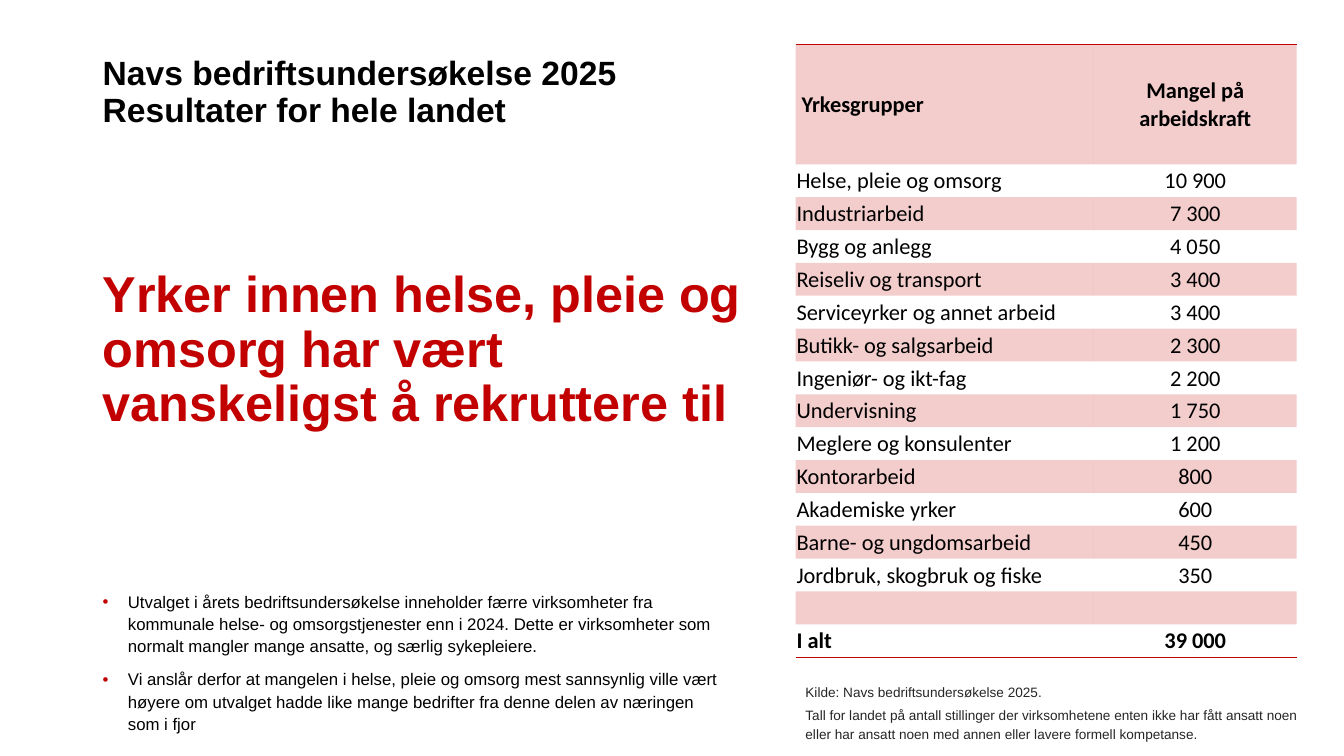
import pptx
import pptx.util
import pptx.dml.color
import pptx.enum.text
import pptx.oxml
import pptx.oxml.ns
from lxml import etree

Inches = pptx.util.Inches
Pt = pptx.util.Pt
RGBColor = pptx.dml.color.RGBColor
ANCHOR = pptx.enum.text.MSO_ANCHOR
ALIGN = pptx.enum.text.PP_ALIGN
qn = pptx.oxml.ns.qn

RED = RGBColor(0xC3, 0x00, 0x00)
BLACK = RGBColor(0x00, 0x00, 0x00)
GREY = RGBColor(0x26, 0x26, 0x26)

OCCUPATIONS = [
    ("Helse, pleie og omsorg", "10 900"),
    ("Industriarbeid", "7 300"),
    ("Bygg og anlegg", "4 050"),
    ("Reiseliv og transport", "3 400"),
    ("Serviceyrker og annet arbeid", "3 400"),
    ("Butikk- og salgsarbeid", "2 300"),
    ("Ingeniør- og ikt-fag", "2 200"),
    ("Undervisning", "1 750"),
    ("Meglere og konsulenter", "1 200"),
    ("Kontorarbeid", "800"),
    ("Akademiske yrker", "600"),
    ("Barne- og ungdomsarbeid", "450"),
    ("Jordbruk, skogbruk og fiske", "350"),
]
SHORTAGES = [
    (" Yrkesgrupper", "Mangel på arbeidskraft"),
    *OCCUPATIONS,
    ("", ""),
    ("I alt", "39 000"),
]
SURVEY_NOTES = [
    "Utvalget i årets bedriftsundersøkelse inneholder færre virksomheter fra "
    "kommunale helse- og omsorgstjenester enn i 2024. Dette er virksomheter som "
    "normalt mangler mange ansatte, og særlig sykepleiere.",
    "Vi anslår derfor at mangelen i helse, pleie og omsorg mest sannsynlig ville vært "
    "høyere om utvalget hadde like mange bedrifter fra denne delen av næringen som i fjor",
]
SOURCE_LINES = [
    "Kilde: Navs bedriftsundersøkelse 2025.",
    "Tall for landet på antall stillinger der virksomhetene enten ikke har fått ansatt noen "
    "eller har ansatt noen med annen eller lavere formell kompetanse.",
]


class SurveySlide:
    """Holds the survey style and adds text and a table to one slide."""

    heading_font = "Arial"
    table_font = "Calibri"
    no_grid_style = "{2D5ABB26-0587-4C30-8999-92F81FD0307C}"

    def __init__(self, slide):
        self.slide = slide

    def set_font(self, font, name, size, color, bold=False):
        font.name, font.size, font.bold = name, Pt(size), bold
        font.color.rgb = color

    def add_bullet(self, paragraph):
        properties = paragraph._p.get_or_add_pPr()
        properties.set("marL", str(Inches(0.25)))
        properties.set("indent", str(-Inches(0.25)))
        bullet_color = etree.SubElement(properties, qn("a:buClr"))
        etree.SubElement(bullet_color, qn("a:srgbClr"), val=str(RED))
        etree.SubElement(properties, qn("a:buFont"), typeface=self.heading_font)
        etree.SubElement(properties, qn("a:buChar"), char="•")

    def text(self, place, lines, size, color, bold=False, anchor=ANCHOR.MIDDLE,
             spacing=0.9, before=0, after=0, bullets=False):
        frame = self.slide.shapes.add_textbox(*map(Inches, place)).text_frame
        frame.word_wrap = True
        frame.vertical_anchor = anchor
        for index, line in enumerate(lines):
            paragraph = frame.paragraphs[0] if index == 0 else frame.add_paragraph()
            paragraph.text = line
            paragraph.line_spacing = spacing
            paragraph.space_before = Pt(before if index else 0)
            paragraph.space_after = Pt(after)
            if bullets:
                self.add_bullet(paragraph)
            self.set_font(paragraph.font, self.heading_font, size, color, bold)

    def tint(self, cell):
        cell.fill.solid()
        cell.fill.fore_color.rgb = RED
        color = cell._tc.tcPr.find(".//" + qn("a:srgbClr"))
        etree.SubElement(color, qn("a:alpha"), val="20000")

    def rule(self, cell, side):
        line = etree.Element(qn(f"a:{side}"), w=str(Pt(1)))
        fill = etree.SubElement(line, qn("a:solidFill"))
        etree.SubElement(fill, qn("a:srgbClr"), val=str(RED))
        cell._tc.get_or_add_tcPr().insert(0, line)

    def table(self, left, top, widths, header_height, row_height, rows):
        height = header_height + row_height * (len(rows) - 1)
        table = self.slide.shapes.add_table(
            len(rows), len(widths), Inches(left), Inches(top),
            Inches(sum(widths)), Inches(height)).table
        table.first_row = table.horz_banding = False
        table._tbl.tblPr.find(qn("a:tableStyleId")).text = self.no_grid_style
        for column, width in zip(table.columns, widths):
            column.width = Inches(width)
        last = len(rows) - 1
        for row_index, values in enumerate(rows):
            table.rows[row_index].height = Inches(row_height if row_index else header_height)
            for column_index, value in enumerate(values):
                cell = table.cell(row_index, column_index)
                cell.vertical_anchor = ANCHOR.MIDDLE
                cell.margin_left = cell.margin_right = cell.margin_top = Inches(0.01)
                cell.margin_bottom = 0
                cell.text = value
                paragraph = cell.text_frame.paragraphs[0]
                paragraph.alignment = ALIGN.CENTER if column_index else ALIGN.LEFT
                self.set_font(paragraph.font, self.table_font, 16, BLACK,
                              row_index in (0, last))
                if row_index % 2:
                    cell.fill.background()
                else:
                    self.tint(cell)
                if row_index == 0:
                    self.rule(cell, "lnT")
                elif row_index == last:
                    self.rule(cell, "lnB")


def main():
    presentation = pptx.Presentation()
    presentation.slide_width = Inches(13.33)
    presentation.slide_height = Inches(7.5)
    survey = SurveySlide(presentation.slides.add_slide(presentation.slide_layouts[6]))

    survey.text((0.92, 2.35, 6.6, 2.26),
                ["Yrker innen helse, pleie og omsorg har vært vanskeligst å rekruttere til"],
                36, RED, bold=True)
    survey.text((0.92, 5.8, 6.32, 1.56), SURVEY_NOTES, 12, BLACK, anchor=ANCHOR.TOP,
                spacing=1.1, after=8, bullets=True)
    survey.table(7.89, 0.44, [2.96, 2.01], 1.19, 4.89 / 15, SHORTAGES)
    survey.text((7.89, 6.62, 5.12, 0.88), SOURCE_LINES, 9.7, GREY, spacing=1.2, before=2)
    survey.text((0.92, 0.34, 8.68, 1.17),
                ["Navs bedriftsundersøkelse 2025", "Resultater for hele landet"],
                24, BLACK, bold=True)

    presentation.save("out.pptx")


if __name__ == "__main__":
    main()
